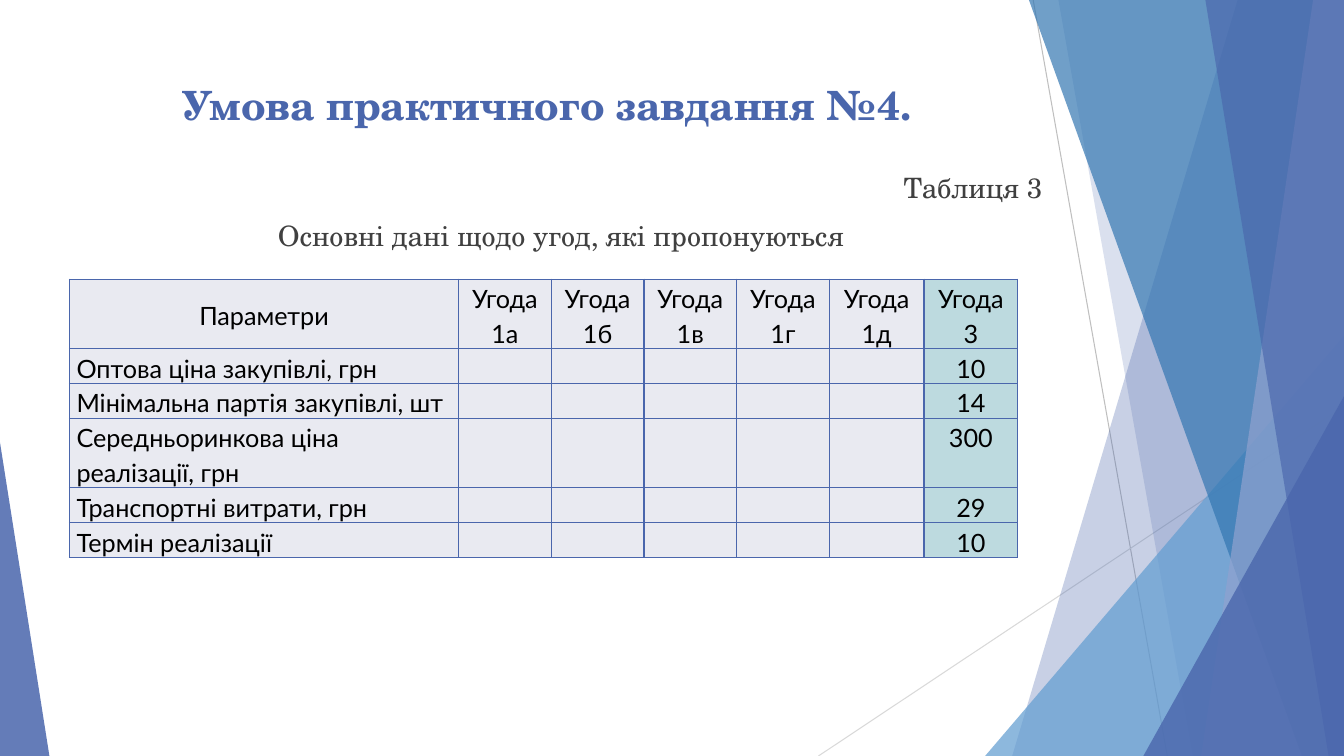
from dataclasses import dataclass

from lxml import etree
from pptx import Presentation
from pptx.dml.color import RGBColor
from pptx.enum import shapes, text
from pptx.oxml import ns
from pptx.util import Pt

LEFT, CENTER, RIGHT = text.PP_ALIGN.LEFT, text.PP_ALIGN.CENTER, text.PP_ALIGN.RIGHT
TOP, MIDDLE = text.MSO_ANCHOR.TOP, text.MSO_ANCHOR.MIDDLE


@dataclass(frozen=True)
class Theme:
    """Colours, fonts and type sizes of the slide."""
    indigo: str = "4A66AC"
    sky: str = "629DD1"
    ocean: str = "3477B2"
    lavender: str = "90A2CF"
    dark_hairline: str = "BFBFBF"
    light_hairline: str = "D9D9D9"
    body_text: str = "404040"
    table_text: str = "000000"
    cell: str = "E9EAF1"
    highlight: str = "BDDADF"
    serif: str = "TeX Gyre Schola"
    sans: str = "Lato"
    title_size: float = 28.8
    body_size: float = 20
    table_size: float = 18


THEME = Theme()
WIDTH, HEIGHT = 960, 540
COLUMNS = [277.9, 66.2, 66.2, 66.2, 66.2, 67.7, 67]
LINE_HEIGHT = 24.84
HEADINGS = ["Параметри"] + [f"Угода {number}" for number in ("1а", "1б", "1в", "1г", "1д", "3")]
DEALS = [
    ("Оптова ціна закупівлі, грн", "10", 1),
    ("Мінімальна партія закупівлі, шт", "14", 1),
    ("Середньоринкова ціна реалізації, грн", "300", 2),
    ("Транспортні витрати, грн", "29", 1),
    ("Термін реалізації", "10", 1),
]


def write(paragraph, words, *, size, font, color, bold=False, align=LEFT,
          before=0, after=0, spacing=1.0):
    """Put formatted text into a paragraph."""
    paragraph.alignment = align
    paragraph.space_before, paragraph.space_after = Pt(before), Pt(after)
    paragraph.line_spacing = spacing
    run = paragraph.add_run()
    run.text = words
    run.font.size, run.font.name, run.font.bold = Pt(size), font, bold
    run.font.color.rgb = RGBColor.from_string(color)


def add_text_box(slide, box, anchor):
    """Add a wrapping text box and return its text frame."""
    frame = slide.shapes.add_textbox(*map(Pt, box)).text_frame
    frame.word_wrap = True
    frame.vertical_anchor = anchor
    return frame


def paint(shape, color, opacity):
    """Give a shape a translucent fill without line or shadow."""
    shape.shadow.inherit = False
    shape.line.fill.background()
    shape.fill.solid()
    shape.fill.fore_color.rgb = RGBColor.from_string(color)
    tint = next(shape.element.spPr.iter(ns.qn("a:srgbClr")))
    etree.SubElement(tint, ns.qn("a:alpha"), val=str(opacity * 1000))


def add_hairline(slide, start, end, color):
    """Draw a thin line between two points."""
    line = slide.shapes.add_connector(
        shapes.MSO_CONNECTOR.STRAIGHT, *map(Pt, (*start, *end)))
    line.line.width = Pt(0.75)
    line.line.color.rgb = RGBColor.from_string(color)
    etree.SubElement(line.element.spPr, ns.qn("a:effectLst"))


def add_facet(slide, box, top_x, bottom_x, color, opacity):
    """Draw a slanted panel that reaches the right edge of its box."""
    left, top, width, height = box
    right, bottom = left + width, top + height
    builder = slide.shapes.build_freeform(left + top_x, top, scale=Pt(1))
    builder.add_line_segments(
        [(right, top), (right, bottom), (left + bottom_x, bottom)], close=True)
    paint(builder.convert_to_shape(), color, opacity)


def add_corner(slide, box, apex, color, opacity):
    """Draw a right triangle with its apex at the left (0) or right (1)."""
    triangle = slide.shapes.add_shape(
        shapes.MSO_SHAPE.ISOSCELES_TRIANGLE, *map(Pt, box))
    triangle.adjustments[0] = apex
    paint(triangle, color, opacity)


def add_decoration(slide, box):
    """Draw the translucent facets at both sides of the slide."""
    left, top, width, height = box
    right, bottom = left + width, top + height

    def corner(base, rise, apex, color, opacity):
        start = right - base if apex else left
        add_corner(slide, (start, bottom - rise, base, rise), apex, color, opacity)

    add_hairline(slide, (left + 738, top), (left + 833.8, bottom), THEME.dark_hairline)
    add_hairline(slide, (right, top + 290.2), (left + 584.6, bottom), THEME.light_hairline)
    add_facet(slide, box, 884.2, 722.9, THEME.indigo, 30)
    add_facet(slide, box, 756, 851.8, THEME.indigo, 20)
    corner(256.3, 300.2, 1, THEME.sky, 72)
    add_facet(slide, box, 735.1, 929.5, THEME.ocean, 70)
    add_facet(slide, box, 938.2, 858.2, THEME.lavender, 70)
    add_facet(slide, box, 861.1, 949, THEME.indigo, 65)
    corner(143.3, 257, 1, THEME.indigo, 80)
    corner(35.3, 223.9, 0, THEME.indigo, 85)


def add_title(slide, box):
    """Add the slide heading."""
    frame = add_text_box(slide, box, MIDDLE)
    write(frame.paragraphs[0], "Умова практичного завдання №4.", size=THEME.title_size,
          font=THEME.serif, color=THEME.indigo, bold=True)


def add_caption(slide, box):
    """Add the table number and the table name."""
    frame = add_text_box(slide, box, TOP)
    style = dict(size=THEME.body_size, font=THEME.serif, color=THEME.body_text)
    write(frame.paragraphs[0], "Таблиця 3", align=RIGHT, **style)
    write(frame.add_paragraph(), "Основні дані щодо угод, які пропонуються",
          align=CENTER, before=10, **style)


def style_cell(cell, color, anchor):
    """Set the margins, borders and fill of a table cell."""
    cell.margin_left = cell.margin_right = Pt(5)
    cell.margin_top = cell.margin_bottom = Pt(0)
    cell.vertical_anchor = anchor
    properties = cell._tc.get_or_add_tcPr()
    for side in ("lnL", "lnR", "lnT", "lnB"):
        border = etree.SubElement(properties, ns.qn(f"a:{side}"), w=str(Pt(1)))
        fill = etree.SubElement(border, ns.qn("a:solidFill"))
        etree.SubElement(fill, ns.qn("a:srgbClr"), val=THEME.indigo)
    cell.fill.solid()
    cell.fill.fore_color.rgb = RGBColor.from_string(color)


def add_deals_table(slide, box):
    """Add the table of deals."""
    blanks = [""] * (len(COLUMNS) - 2)
    rows = [HEADINGS] + [[name, *blanks, value] for name, value, _ in DEALS]
    line_counts = [2] + [lines for _, _, lines in DEALS]
    table = slide.shapes.add_table(len(rows), len(COLUMNS), *map(Pt, box)).table
    for column, width in zip(table.columns, COLUMNS):
        column.width = Pt(width)
    for r, (row, lines) in enumerate(zip(rows, line_counts)):
        table.rows[r].height = Pt(lines * LINE_HEIGHT)
        for c, words in enumerate(row):
            cell = table.cell(r, c)
            last = c == len(COLUMNS) - 1
            style_cell(cell, THEME.highlight if last else THEME.cell, TOP if r else MIDDLE)
            if words:
                write(cell.text_frame.paragraphs[0], words, size=THEME.table_size,
                      font=THEME.sans, color=THEME.table_text, after=10, spacing=1.15,
                      align=LEFT if r and c == 0 else CENTER)


def main():
    """Build the slide and save it."""
    presentation = Presentation()
    presentation.slide_width, presentation.slide_height = Pt(WIDTH), Pt(HEIGHT)
    slide = presentation.slides.add_slide(presentation.slide_layouts[6])
    add_decoration(slide, (0, 0, WIDTH, HEIGHT))
    add_title(slide, (123.1, 50.4, 555.1, 48.2))
    add_caption(slide, (49.7, 118.2, 702, 66))
    add_deals_table(slide, (49.7, 199.4, sum(COLUMNS), 8 * LINE_HEIGHT))
    presentation.save("out.pptx")


if __name__ == "__main__":
    main()
